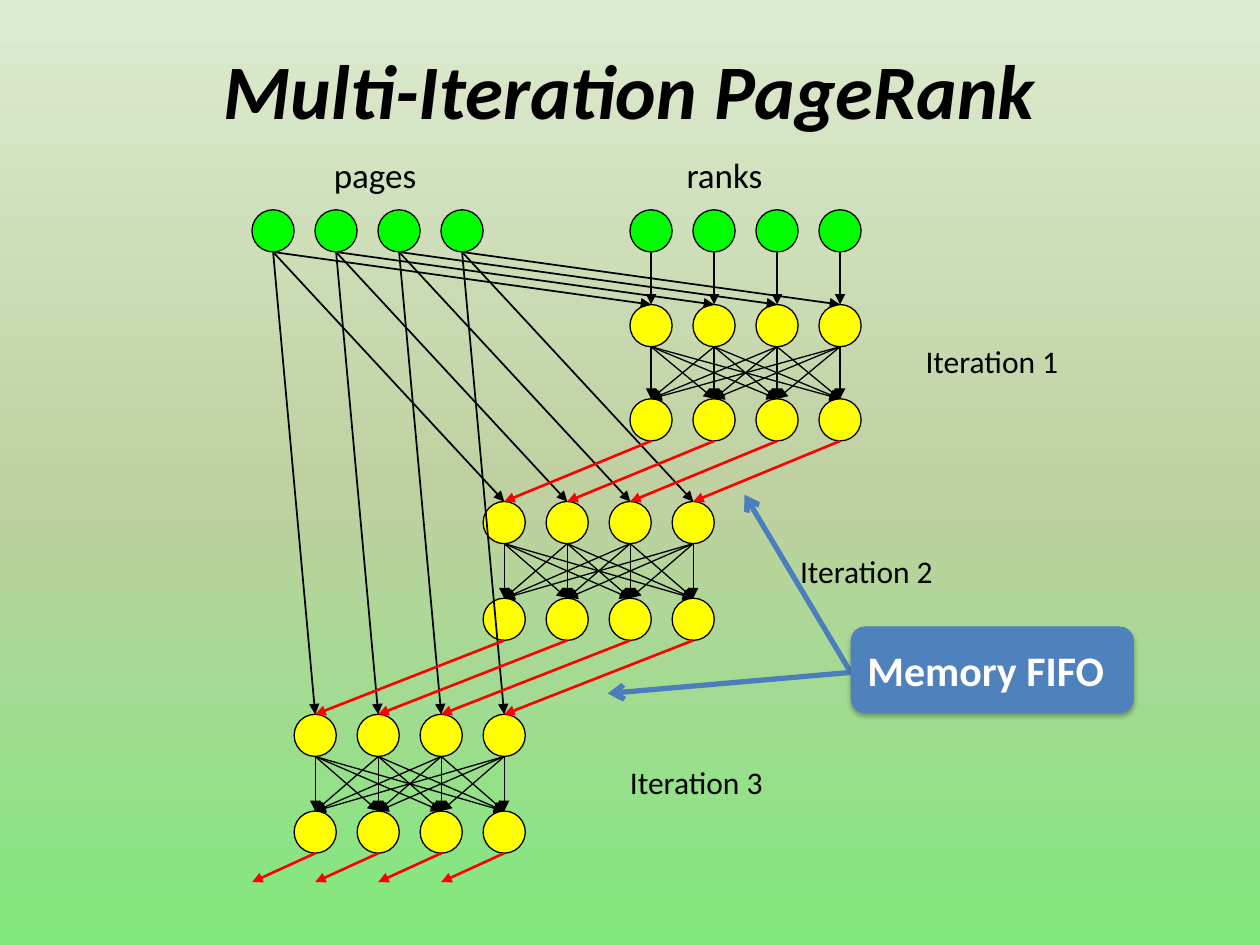
from dataclasses import dataclass
from itertools import product
from lxml.etree import SubElement
from pptx import Presentation
from pptx.dml.color import RGBColor
from pptx.enum.shapes import MSO_CONNECTOR as Link, MSO_SHAPE as Kind
from pptx.enum.text import MSO_ANCHOR as Anchor, MSO_AUTO_SIZE as Fit, PP_ALIGN as Align
from pptx.oxml.ns import qn
from pptx.util import Cm, Pt


@dataclass(frozen=True)
class Theme:
    """Colours, type sizes and line widths of the slide."""
    font: str = "Calibri"
    ink: str = "000000"
    page: str = "00FF00"
    node: str = "FFFF00"
    flow: str = "FF0000"
    note: str = "4F81BD"
    lead: str = "4B7EBC"
    white: str = "FFFFFF"
    sky: tuple = ((0, "DDEBCF"), (52, "BFD1A1"), (100, "7FE87D"))
    title: int = 44
    head: int = 20
    label: int = 18
    call: int = 24
    thin: float = 0.75
    mid: float = 1
    bold: float = 1.5
    thick: float = 3


T = Theme()
COUNT = 4
STEP = 1.27
SIZE = 0.85


def tint(code):
    """Turn a hex code into a colour."""
    return RGBColor.from_string(code)


def sub(parent, tag, **attrs):
    """Add a DrawingML child element."""
    return SubElement(parent, qn("a:" + tag), attrs)


def write(frame, text, size, color=T.ink, bold=False, slant=False):
    """Put one styled run into a text frame."""
    run = frame.paragraphs[0].add_run()
    run.text = text
    font = run.font
    font.name, font.size, font.color.rgb = T.font, Pt(size), tint(color)
    font.bold, font.italic = bold, slant


def arrow(shapes, start, end, color=T.ink, width=T.thin, head="triangle"):
    """Draw a straight arrow between two points."""
    line = shapes.add_connector(Link.STRAIGHT, *map(Cm, start + end))
    line.line.color.rgb, line.line.width = tint(color), Pt(width)
    sub(line.line._get_or_add_ln(), "tailEnd", type=head)
    sub(line._element.spPr, "effectLst")


def label(shapes, text, left, top, wide, size):
    """Place a short unwrapped label."""
    box = shapes.add_textbox(Cm(left), Cm(top), Cm(wide), Cm(size / 18))
    box.text_frame.word_wrap = False
    box.text_frame.auto_size = Fit.SHAPE_TO_FIT_TEXT
    write(box.text_frame, text, size)


def ports(left, top):
    """List the centre points along one edge of a row of nodes."""
    return [(left + SIZE / 2 + i * STEP, top) for i in range(COUNT)]


def row(shapes, left, top, color):
    """Draw a row of nodes and return its top and bottom ports."""
    for i in range(COUNT):
        dot = shapes.add_shape(Kind.OVAL, Cm(left + i * STEP), Cm(top), Cm(SIZE), Cm(SIZE))
        dot.shadow.inherit = False
        dot.fill.solid()
        dot.fill.fore_color.rgb = tint(color)
        dot.line.color.rgb, dot.line.width = tint(T.ink), Pt(T.thin)
    return ports(left, top), ports(left, top + SIZE)


def stage(slide, left, top, gap):
    """Draw one iteration and return its entry and exit ports."""
    shapes = slide.shapes.add_group_shape().shapes
    entry, out = row(shapes, left, top, T.node)
    goal, leave = row(shapes, left, top + gap, T.node)
    for start, end in product(out, goal):
        arrow(shapes, start, end)
    return entry, leave


def join(shapes, starts, ends, color=T.ink, width=T.mid):
    """Link two rows of ports one to one."""
    for start, end in zip(starts, ends):
        arrow(shapes, start, end, color, width)


def backdrop(slide):
    """Fill the background with the vertical gradient."""
    fill = slide.background.fill
    fill.gradient()
    fill.gradient_angle = 270
    stops = slide.background._cSld.find(".//" + qn("a:gsLst"))
    for stop in list(stops):
        stops.remove(stop)
    for place, code in T.sky:
        stop = sub(stops, "gs", pos=str(place * 1000))
        sub(stop, "srgbClr", val=code)


def heading(slide, left, top, wide, high):
    """Place the centred title."""
    frame = slide.shapes.add_textbox(Cm(left), Cm(top), Cm(wide), Cm(high)).text_frame
    frame.word_wrap, frame.vertical_anchor = True, Anchor.MIDDLE
    frame.paragraphs[0].alignment = Align.CENTER
    write(frame, "Multi-Iteration PageRank", T.title, bold=True, slant=True)


def graph(slide, left, top):
    """Draw inputs, the three iterations and the flow between them."""
    shapes = slide.shapes
    pages = row(shapes.add_group_shape().shapes, left, top, T.page)[1]
    ranks = row(shapes.add_group_shape().shapes, left + 7.62, top, T.page)[1]
    label(shapes, "pages", left + 1.4, top - 1.26, 2.18, T.head)
    label(shapes, "ranks", left + 8.51, top - 1.26, 2.06, T.head)
    spots = ((7.62, 1.91, 1.9, 13.33, 2.54), (4.66, 5.88, 1.95, 10.8, 6.77),
             (0.85, 10.17, 1.95, 7.37, 11.03))
    last = None
    for turn, (x, y, gap, side, down) in enumerate(spots, 1):
        entry, leave = stage(slide, left + x, top + y, gap)
        join(shapes, pages, entry)
        if last:
            join(shapes, last, entry, T.flow, T.bold)
        else:
            join(shapes, ranks, entry, width=T.thin)
        label(shapes, f"Iteration {turn}", left + side, top + down, 3.23, T.label)
        last = leave
    ends = [(x - STEP, y + 0.58) for x, y in last]
    join(shapes.add_group_shape().shapes, last, ends, T.flow, T.bold)


def callout(slide, left, top, wide, high):
    """Draw the memory box with its two pointers."""
    shapes = slide.shapes
    root = (left, top + high / 2 + 0.05)
    for dx, dy in ((-2.14, -2.66), (-4.9, 1.35)):
        arrow(shapes, root, (left + dx, top + dy), T.lead, T.thick, "arrow")
    box = shapes.add_shape(Kind.ROUNDED_RECTANGLE, Cm(left), Cm(top), Cm(wide), Cm(high))
    box.shadow.inherit = False
    box.fill.solid()
    box.fill.fore_color.rgb = tint(T.note)
    box.line.fill.background()
    cast = sub(box._element.spPr.find(qn("a:effectLst")), "outerShdw",
               blurRad=str(Pt(3.1)), dist=str(Pt(1.8)), dir="5400000", rotWithShape="0")
    sub(sub(cast, "srgbClr", val=T.ink), "alpha", val="29000")
    frame = box.text_frame
    frame.word_wrap, frame.vertical_anchor = True, Anchor.MIDDLE
    frame.paragraphs[0].alignment = Align.LEFT
    write(frame, "Memory FIFO", T.call, T.white, bold=True)


def main():
    """Build the slide and save it."""
    deck = Presentation()
    deck.slide_width, deck.slide_height = Cm(25.4), Cm(19.05)
    slide = deck.slides.add_slide(deck.slide_layouts[6])
    backdrop(slide)
    heading(slide, 1.27, 0.2, 22.86, 3.18)
    graph(slide, 5.08, 4.23)
    callout(slide, 17.15, 12.63, 5.71, 1.75)
    deck.save("out.pptx")


if __name__ == "__main__":
    main()
